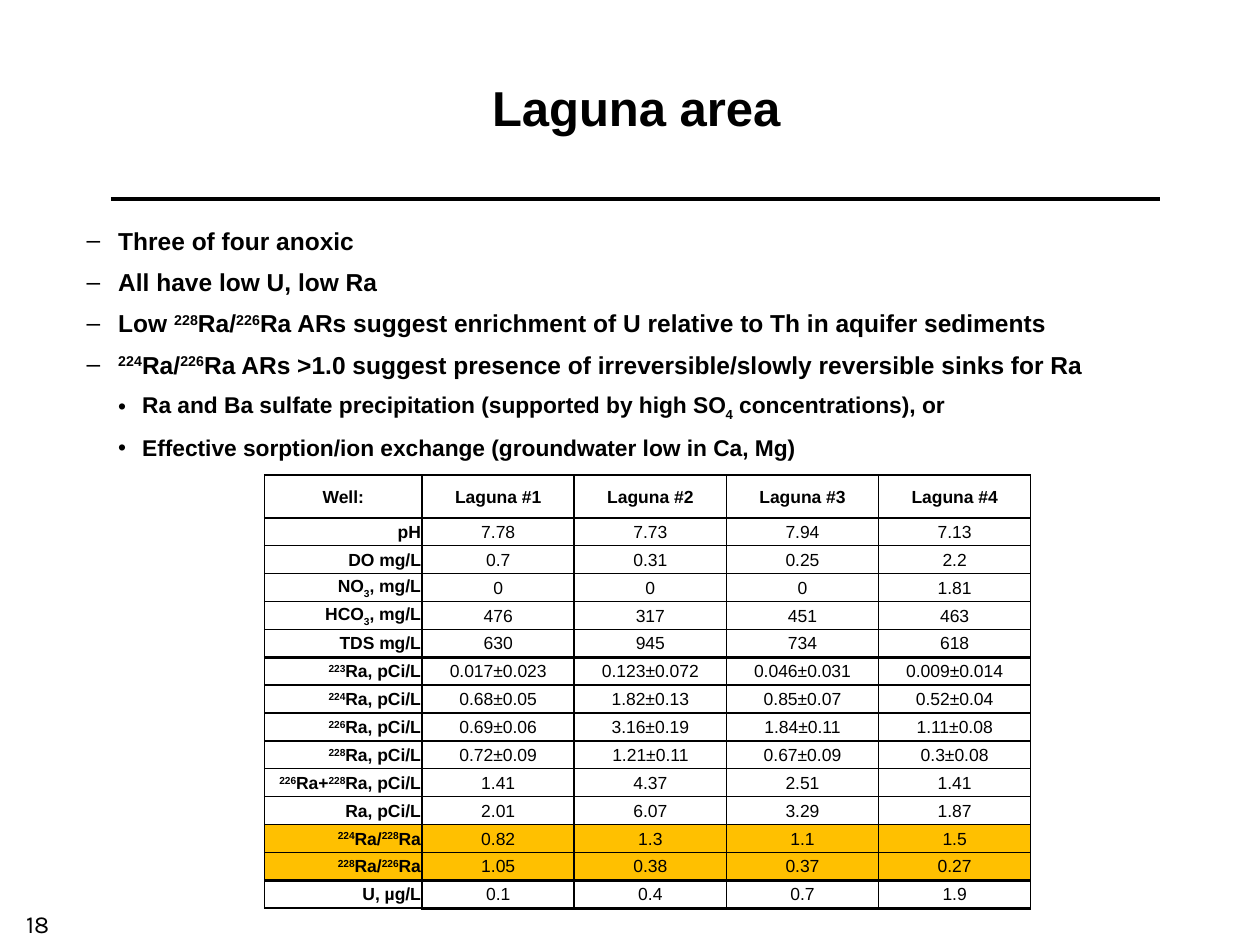
from dataclasses import dataclass

from lxml import etree
from pptx import Presentation
from pptx.dml.color import RGBColor
from pptx.enum.shapes import MSO_CONNECTOR
from pptx.enum.text import MSO_ANCHOR, PP_ALIGN
from pptx.oxml.ns import qn
from pptx.util import Inches, Pt

CENTER, RIGHT = PP_ALIGN.CENTER, PP_ALIGN.RIGHT
MIDDLE, BOTTOM = MSO_ANCHOR.MIDDLE, MSO_ANCHOR.BOTTOM
STRAIGHT = MSO_CONNECTOR.STRAIGHT
TITLE_ONLY = 5


@dataclass(frozen=True)
class Theme:
    ink: str = "000000"
    highlight: str = "FFC000"
    font: str = "Arial"
    number_font: str = "Karla"
    title_size: int = 28
    finding_size: int = 14
    detail_size: int = 13
    table_size: int = 10
    number_size: int = 14
    thin: int = 1
    thick: int = 2


# "|" separates runs; a leading "^" raises a run and "_" lowers it.
BASELINES = {"^": "30000", "_": "-25000"}

FINDINGS = [
    "Three of four anoxic",
    "All have low U, low Ra",
    "Low |^228|Ra/|^226|Ra ARs suggest enrichment of U relative to Th in aquifer sediments",
    "^224|Ra/|^226|Ra ARs >1.0 suggest presence of irreversible/slowly reversible sinks for Ra",
]
DETAILS = [
    "Ra and Ba sulfate precipitation (supported by high SO|_4| concentrations), or",
    "Effective sorption/ion exchange (groundwater low in Ca, Mg)",
]
WELL_DATA = [
    ("Well:", "Laguna #1", "Laguna #2", "Laguna #3", "Laguna #4"),
    ("pH", "7.78", "7.73", "7.94", "7.13"),
    ("DO mg/L", "0.7", "0.31", "0.25", "2.2"),
    ("NO|_3|, mg/L", "0", "0", "0", "1.81"),
    ("HCO|_3|, mg/L", "476", "317", "451", "463"),
    ("TDS mg/L", "630", "945", "734", "618"),
    ("^223|Ra, pCi/L", "0.017±0.023", "0.123±0.072", "0.046±0.031", "0.009±0.014"),
    ("^224|Ra, pCi/L", "0.68±0.05", "1.82±0.13", "0.85±0.07", "0.52±0.04"),
    ("^226|Ra, pCi/L", "0.69±0.06", "3.16±0.19", "1.84±0.11", "1.11±0.08"),
    ("^228|Ra, pCi/L", "0.72±0.09", "1.21±0.11", "0.67±0.09", "0.3±0.08"),
    ("^226|Ra+|^228|Ra, pCi/L", "1.41", "4.37", "2.51", "1.41"),
    ("Ra, pCi/L", "2.01", "6.07", "3.29", "1.87"),
    ("^224|Ra/|^228|Ra", "0.82", "1.3", "1.1", "1.5"),
    ("^228|Ra/|^226|Ra", "1.05", "0.38", "0.37", "0.27"),
    ("U, µg/L", "0.1", "0.4", "0.7", "1.9"),
]
RATIO_ROWS = (12, 13)
GROUP_ENDS = (5, 13)


class SlideBuilder:
    def __init__(self, slide, theme):
        self.slide = slide
        self.theme = theme

    def add_runs(self, paragraph, text, size, bold=True, font=None):
        """Add the runs of marked-up text to a paragraph."""
        for part in text.split("|"):
            if not part:
                continue
            baseline = BASELINES.get(part[0])
            run = paragraph.add_run()
            run.text = part[1:] if baseline else part
            run.font.name = font or self.theme.font
            run.font.size = Pt(size)
            run.font.bold = bold
            run.font.color.rgb = RGBColor.from_string(self.theme.ink)
            if baseline:
                run.font._element.set("baseline", baseline)

    def title(self, text, left, top, width, height):
        title = self.slide.shapes.title
        title.left, title.top = Inches(left), Inches(top)
        title.width, title.height = Inches(width), Inches(height)
        title.text_frame.vertical_anchor = MIDDLE
        paragraph = title.text_frame.paragraphs[0]
        paragraph.alignment = CENTER
        self.add_runs(paragraph, text, self.theme.title_size)

    def rule(self, left, right, y):
        rule = self.slide.shapes.add_connector(
            STRAIGHT, Inches(left), Inches(y), Inches(right), Inches(y))
        rule.line.color.rgb = RGBColor.from_string(self.theme.ink)
        rule.line.width = Pt(self.theme.thick)
        etree.SubElement(rule._element.spPr, qn("a:effectLst"))

    def text_frame(self, left, top, width, height):
        box = self.slide.shapes.add_textbox(
            Inches(left), Inches(top), Inches(width), Inches(height))
        box.text_frame.word_wrap = True
        return box.text_frame

    def bullet(self, paragraph, text, mark, size, indent, hanging):
        properties = paragraph._p.get_or_add_pPr()
        properties.set("marL", str(Inches(indent)))
        properties.set("indent", str(-Inches(hanging)))
        etree.SubElement(properties, qn("a:buFont"), typeface=self.theme.font)
        etree.SubElement(properties, qn("a:buChar"), char=mark)
        paragraph.line_spacing = 1.05
        self.add_runs(paragraph, text, size)

    def findings(self, findings, details, left, top, width, height):
        frame = self.text_frame(left, top, width, height)
        for i, text in enumerate(findings):
            paragraph = frame.add_paragraph() if i else frame.paragraphs[0]
            self.bullet(paragraph, text, "–", self.theme.finding_size, 0.25, 0.25)
            paragraph.space_before = Pt(6 if i else 0)
        paragraph.space_after = Pt(6)
        for text in details:
            paragraph = frame.add_paragraph()
            self.bullet(paragraph, text, "•", self.theme.detail_size, 0.44, 0.19)
            paragraph.space_after = Pt(6)

    def borders(self, cell, top, bottom):
        """Draw all four sides, with thin ones left and right."""
        thin = self.theme.thin
        sides = {"L": thin, "R": thin, "T": top, "B": bottom}
        for side, points in sides.items():
            line = etree.SubElement(
                cell._tc.get_or_add_tcPr(), qn(f"a:ln{side}"), w=str(Pt(points)))
            fill = etree.SubElement(line, qn("a:solidFill"))
            etree.SubElement(fill, qn("a:srgbClr"), val=self.theme.ink)

    def well_table(self, data, left, top, width, height, label_width, header_height):
        row_count, column_count = len(data), len(data[0])
        table = self.slide.shapes.add_table(
            row_count, column_count,
            Inches(left), Inches(top), Inches(width), Inches(height)).table
        table.first_row = table.horz_banding = False
        for c, column in enumerate(table.columns):
            column.width = Inches((width - label_width) / (column_count - 1) if c else label_width)
        for r, row in enumerate(table.rows):
            row.height = Inches((height - header_height) / (row_count - 1) if r else header_height)
            for c, text in enumerate(data[r]):
                self.well_cell(table.cell(r, c), text, r, c, r == row_count - 1)

    def well_cell(self, cell, text, r, c, is_last):
        theme = self.theme
        thick_bottom = r in GROUP_ENDS or (is_last and c > 0)
        self.borders(cell,
                     theme.thick if r - 1 in GROUP_ENDS else theme.thin,
                     theme.thick if thick_bottom else theme.thin)
        if r in RATIO_ROWS:
            cell.fill.solid()
            cell.fill.fore_color.rgb = RGBColor.from_string(theme.highlight)
        else:
            cell.fill.background()
        cell.margin_left = cell.margin_right = cell.margin_top = Inches(0.01)
        cell.margin_bottom = 0
        cell.vertical_anchor = MIDDLE
        paragraph = cell.text_frame.paragraphs[0]
        paragraph.alignment = RIGHT if r and not c else CENTER
        self.add_runs(paragraph, text, theme.table_size, bold=r == 0 or c == 0)

    def page_number(self, number, left, top, width, height):
        frame = self.text_frame(left, top, width, height)
        frame.vertical_anchor = BOTTOM
        paragraph = frame.paragraphs[0]
        paragraph.alignment = CENTER
        self.add_runs(paragraph, number, self.theme.number_size, False, self.theme.number_font)


def main():
    deck = Presentation()
    deck.slide_width, deck.slide_height = Inches(10), Inches(7.5)
    slide = deck.slides.add_slide(deck.slide_layouts[TITLE_ONLY])
    builder = SlideBuilder(slide, Theme())
    builder.rule(0.88, 9.21, 1.58)
    builder.title("Laguna area", 0.8, 0.18, 8.5, 1.33)
    builder.findings(FINDINGS, DETAILS, 0.59, 1.73, 8.97, 2.26)
    builder.well_table(WELL_DATA, 2.1, 3.77, 6.08, 3.44, label_width=1.25, header_height=0.34)
    builder.page_number("18", 0, 7, 0.6, 0.5)
    deck.save("out.pptx")


if __name__ == "__main__":
    main()
